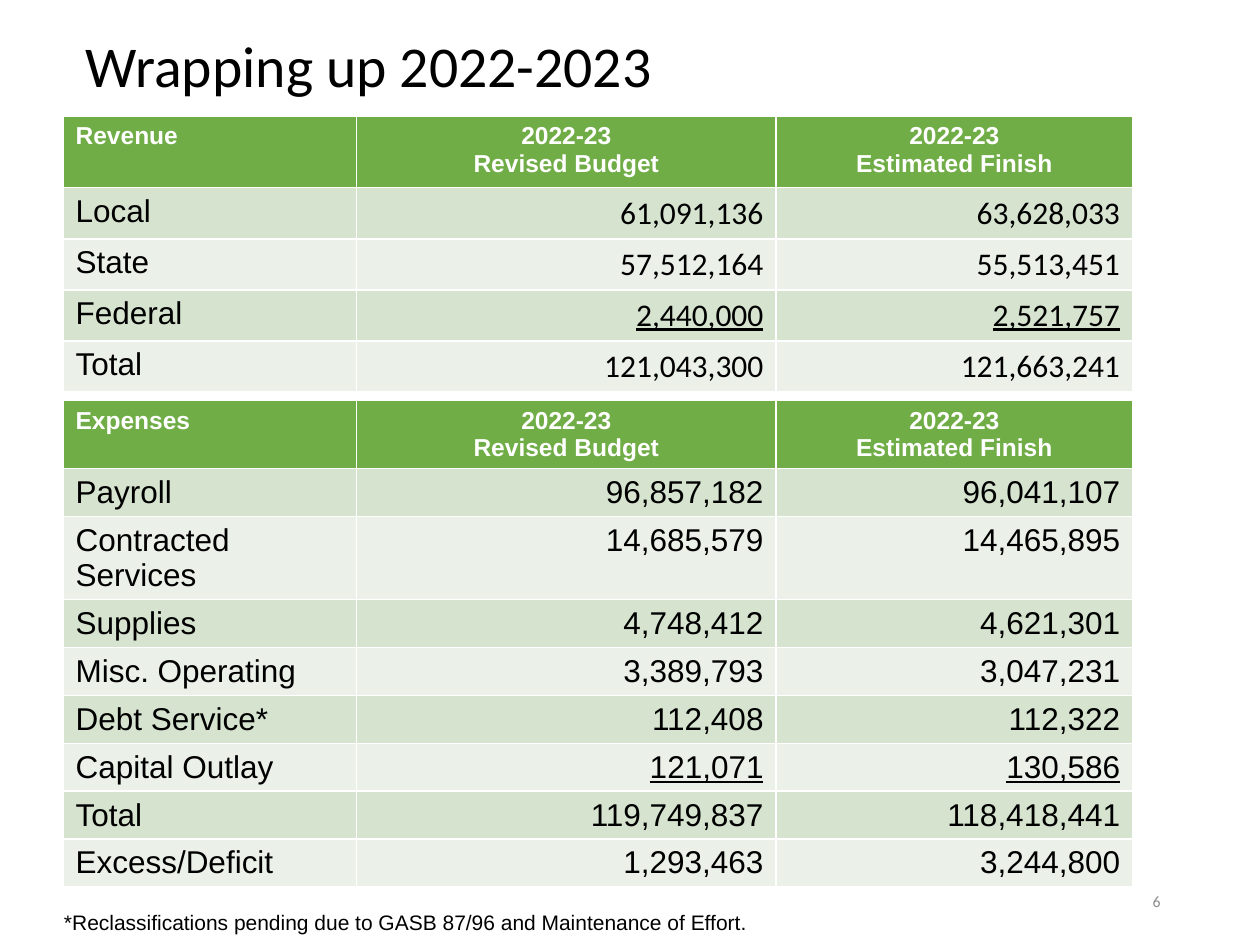
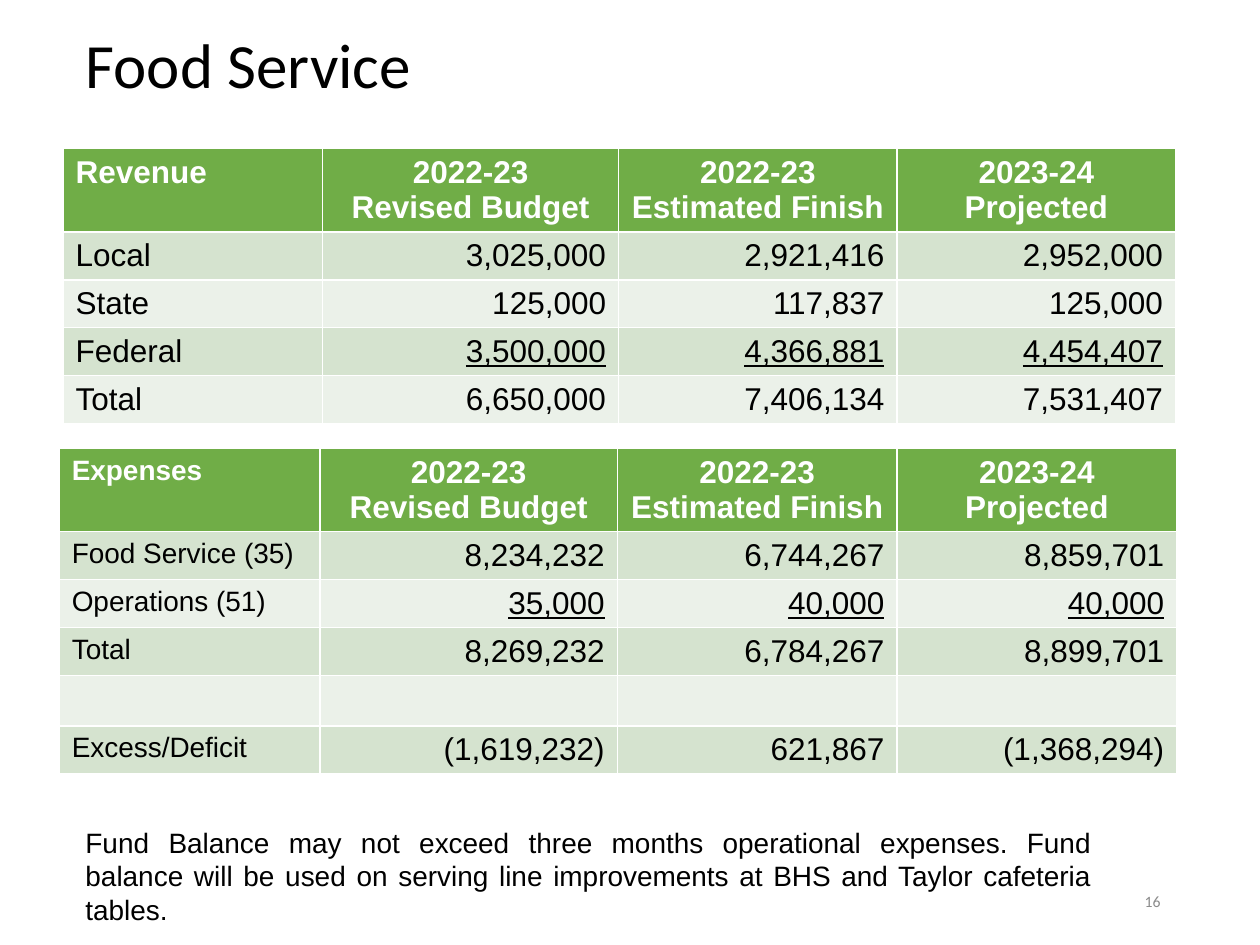
import pptx
import pptx.dml.color
import pptx.enum.text
import pptx.util

Inches, Pt = pptx.util.Inches, pptx.util.Pt
RGBColor = pptx.dml.color.RGBColor
ALIGN = pptx.enum.text.PP_ALIGN
MIDDLE = pptx.enum.text.MSO_ANCHOR.MIDDLE

# Shared colours, fonts and headings
BLACK = RGBColor(0x00, 0x00, 0x00)
WHITE = RGBColor(0xFF, 0xFF, 0xFF)
GREY = RGBColor(0x8C, 0x8C, 0x8C)
GREEN = RGBColor(0x70, 0xAD, 0x47)
BANDS = [RGBColor(0xEB, 0xF1, 0xE9), RGBColor(0xD5, 0xE3, 0xCF)]
SANS, TITLE_FONT = "Arial", "Calibri"
HEADINGS = ["2022-23\nRevised Budget", "2022-23\nEstimated Finish", "2023-24\nProjected"]


def write(frame, text, size, color=BLACK, font=SANS, align=ALIGN.LEFT, bold=False, underline=False):
    frame.text = text
    frame.word_wrap = True
    for para in frame.paragraphs:
        para.alignment = align
        para.font.size = Pt(size)
        para.font.name = font
        para.font.color.rgb = color
        para.font.bold = bold
        para.font.underline = underline


def add_text(page, place, text, size, **style):
    box = page.shapes.add_textbox(*[Inches(value) for value in place])
    write(box.text_frame, text, size, **style)
    return box


# Content: figures in the "underlined" row stand above a sum
pages = [
    {
        "title": "Wrapping up 2022-2023", "title_place": (0.58, 0.17, 8.95, 0.75), "title_size": 33,
        "number": "6",
        "note": "*Reclassifications pending due to GASB 87/96 and Maintenance of Effort.",
        "note_place": (0.41, 7.17, 8.83, 0.3), "note_size": 12, "note_align": ALIGN.LEFT,
        "tables": [
            {
                "name": "Revenue", "left": 0.5, "top": 0.92, "columns": [2.33, 3.33, 2.83],
                "heights": [0.57] + [0.4] * 4, "name_size": 14, "heading_size": 14,
                "label_size": 18, "figure_font": TITLE_FONT, "underlined": "Federal",
                "rows": [
                    ["Local", "61,091,136", "63,628,033"],
                    ["State", "57,512,164", "55,513,451"],
                    ["Federal", "2,440,000", "2,521,757"],
                    ["Total", "121,043,300", "121,663,241"],
                ],
            },
            {
                "name": "Expenses", "left": 0.5, "top": 3.18, "columns": [2.33, 3.33, 2.83],
                "heights": [0.53, 0.38, 0.66] + [0.38] * 6, "name_size": 14, "heading_size": 14,
                "label_size": 18, "figure_font": SANS, "underlined": "Capital Outlay",
                "rows": [
                    ["Payroll", "96,857,182", "96,041,107"],
                    ["Contracted Services", "14,685,579", "14,465,895"],
                    ["Supplies", "4,748,412", "4,621,301"],
                    ["Misc. Operating", "3,389,793", "3,047,231"],
                    ["Debt Service*", "112,408", "112,322"],
                    ["Capital Outlay", "121,071", "130,586"],
                    ["Total", "119,749,837", "118,418,441"],
                    ["Excess/Deficit", "1,293,463", "3,244,800"],
                ],
            },
        ],
    },
    {
        "title": "Food Service", "title_place": (0.58, 0.08, 8.95, 0.92), "title_size": 36,
        "number": "16",
        "note": "Fund Balance may not exceed three months operational expenses. Fund balance will be "
                "used on serving line improvements at BHS and Taylor cafeteria tables.",
        "note_place": (0.58, 6.5, 8.18, 0.91), "note_size": 16, "note_align": ALIGN.JUSTIFY,
        "tables": [
            {
                "name": "Revenue", "left": 0.5, "top": 1.18, "columns": [2.06, 2.35, 2.21, 2.21],
                "heights": [0.65] + [0.38] * 4, "name_size": 18, "heading_size": 18,
                "label_size": 18, "figure_font": SANS, "underlined": "Federal",
                "rows": [
                    ["Local", "3,025,000", "2,921,416", "2,952,000"],
                    ["State", "125,000", "117,837", "125,000"],
                    ["Federal", "3,500,000", "4,366,881", "4,454,407"],
                    ["Total", "6,650,000", "7,406,134", "7,531,407"],
                ],
            },
            {
                "name": "Expenses", "left": 0.47, "top": 3.56, "columns": [2.07, 2.36, 2.22, 2.22],
                "heights": [0.65, 0.38, 0.38, 0.38, 0.4, 0.38], "name_size": 16, "heading_size": 18,
                "label_size": 16, "figure_font": SANS, "underlined": "Operations (51)",
                "rows": [
                    ["Food Service (35)", "8,234,232", "6,744,267", "8,859,701"],
                    ["Operations (51)", "35,000", "40,000", "40,000"],
                    ["Total", "8,269,232", "6,784,267", "8,899,701"],
                    ["", "", "", ""],
                    ["Excess/Deficit", "(1,619,232)", "621,867", "(1,368,294)"],
                ],
            },
        ],
    },
]

deck = pptx.Presentation()
deck.slide_width, deck.slide_height = Inches(10), Inches(7.5)

for content in pages:
    page = deck.slides.add_slide(deck.slide_layouts[5])

    # Title
    title = page.shapes.title
    title.left, title.top, title.width, title.height = [Inches(value) for value in content["title_place"]]
    title.text_frame.vertical_anchor = MIDDLE
    write(title.text_frame, content["title"], content["title_size"], font=TITLE_FONT)
    title.text_frame.paragraphs[0].line_spacing = 0.9

    # Budget tables; the default table style draws the white rules
    for budget in content["tables"]:
        columns, heights = budget["columns"], budget["heights"]
        table = page.shapes.add_table(
            len(heights), len(columns), Inches(budget["left"]), Inches(budget["top"]),
            Inches(sum(columns)), Inches(sum(heights))).table
        for column, width in zip(table.columns, columns):
            column.width = Inches(width)
        for row, height in zip(table.rows, heights):
            row.height = Inches(height)

        header = [budget["name"]] + HEADINGS[:len(columns) - 1]
        for row_index, texts in enumerate([header] + budget["rows"]):
            for column_index, text in enumerate(texts):
                cell = table.cell(row_index, column_index)
                cell.fill.solid()
                cell.fill.fore_color.rgb = BANDS[row_index % 2] if row_index else GREEN
                is_label = column_index == 0
                if row_index == 0:
                    write(cell.text_frame, text, budget["name_size" if is_label else "heading_size"],
                          WHITE, align=ALIGN.LEFT if is_label else ALIGN.CENTER, bold=True)
                elif is_label:
                    write(cell.text_frame, text, budget["label_size"])
                else:
                    write(cell.text_frame, text, 18, font=budget["figure_font"], align=ALIGN.RIGHT,
                          underline=texts[0] == budget["underlined"])

    # Note and page number
    add_text(page, content["note_place"], content["note"], content["note_size"], align=content["note_align"])
    number = add_text(page, (7.06, 6.95, 2.25, 0.4), content["number"], 9,
                      color=GREY, font=TITLE_FONT, align=ALIGN.RIGHT)
    number.text_frame.vertical_anchor = MIDDLE

deck.save("out.pptx")
